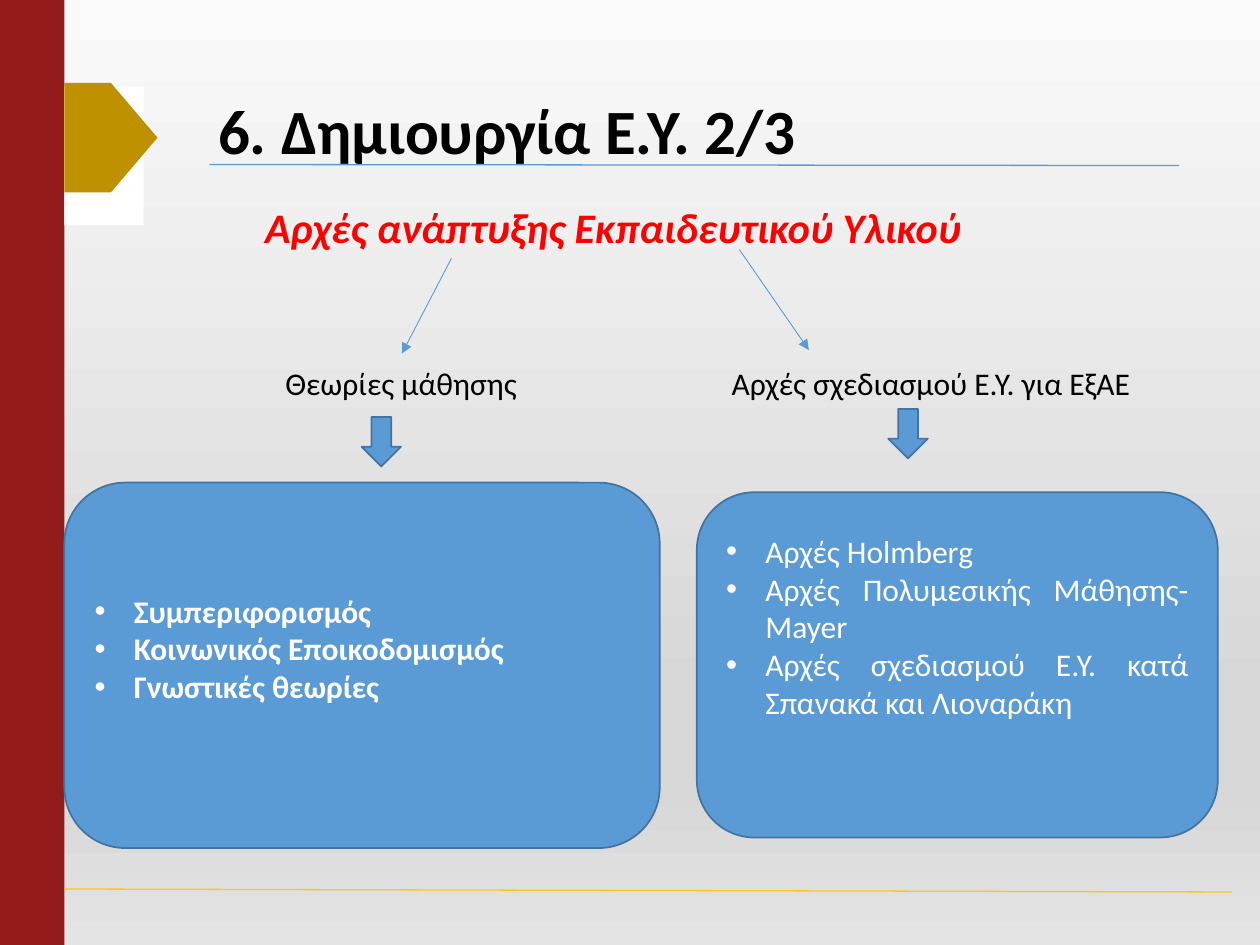
from lxml import etree
from pptx import Presentation
from pptx import util as u
from pptx.dml import color
from pptx.enum import shapes, text
from pptx.oxml import ns

COLORS = {
    "red": "931B1B", "gold": "BF9000", "yellow": "FFC61A", "blue": "5B9BD5",
    "edge": "43739E", "white": "FFFFFF", "black": "000000", "accent": "FF0000",
}
BACKGROUND = [(0, "FAFAFA"), (74, "D7D7D7"), (83, "D7D7D7"), (100, "E4E4E4")]
KIND = shapes.MSO_SHAPE


def rgb(name):
    return color.RGBColor.from_string(COLORS[name])


def add_xml(parent, tag, **attributes):
    return etree.SubElement(parent, ns.qn(tag), attributes)


def apply(target, values):
    for name, value in values.items():
        setattr(target, name, value)


class Builder:
    """Holds the style and the current slide; lengths are in points."""

    font = "Calibri"
    indent = 22.5

    def __init__(self, deck):
        self.page = deck.slides.add_slide(deck.slide_layouts[5])

    def background(self, stops):
        fill = self.page.background.fill
        fill.gradient()
        fill.gradient_angle = 270
        stop_list = self.page.element.find(".//" + ns.qn("a:gsLst"))
        for stop in list(stop_list):
            stop_list.remove(stop)
        for percent, value in stops:
            stop = add_xml(stop_list, "a:gs", pos=str(percent * 1000))
            add_xml(stop, "a:srgbClr", val=value)

    def add_span(self, paragraph, words, size, ink, **style):
        span = paragraph.add_run()
        span.text = words
        apply(span.font, {"name": self.font, "size": u.Pt(size), **style})
        span.font.color.rgb = rgb(ink)

    def title(self, words, left, top, width, height):
        box = self.page.shapes.title
        apply(box, {"left": u.Pt(left), "top": u.Pt(top),
                    "width": u.Pt(width), "height": u.Pt(height)})
        apply(box.text_frame, {
            "vertical_anchor": text.MSO_ANCHOR.BOTTOM, "word_wrap": True,
            "margin_left": u.Pt(31), "margin_bottom": 0,
            "auto_size": text.MSO_AUTO_SIZE.NONE})
        paragraph = box.text_frame.paragraphs[0]
        apply(paragraph, {"alignment": text.PP_ALIGN.LEFT, "line_spacing": 0.9})
        self.add_span(paragraph, words, 36, "black", bold=True)

    def label(self, words, left, top, width, height, size=18, ink="black", **style):
        box = self.page.shapes.add_textbox(*map(u.Pt, (left, top, width, height)))
        apply(box.text_frame, {"word_wrap": True,
                               "auto_size": text.MSO_AUTO_SIZE.SHAPE_TO_FIT_TEXT})
        self.add_span(box.text_frame.paragraphs[0], words, size, ink, **style)

    def shape(self, kind, left, top, width, height, fill, edge=None):
        shape = self.page.shapes.add_shape(kind, *map(u.Pt, (left, top, width, height)))
        shape.shadow.inherit = False
        shape.fill.solid()
        shape.fill.fore_color.rgb = rgb(fill)
        if edge:
            shape.line.color.rgb = rgb(edge)
            shape.line.width = u.Pt(1)
        else:
            shape.line.fill.background()
        return shape

    def bullet_panel(self, items, left, top, width, height, bottom, bold=False):
        panel = self.shape(KIND.ROUNDED_RECTANGLE, left, top, width, height, "blue", "edge")
        frame = panel.text_frame
        apply(frame, {"word_wrap": True, "margin_bottom": u.Pt(bottom),
                      "vertical_anchor": text.MSO_ANCHOR.MIDDLE})
        for number, item in enumerate(items):
            paragraph = frame.add_paragraph() if number else frame.paragraphs[0]
            paragraph.alignment = text.PP_ALIGN.JUSTIFY
            layout = paragraph._p.get_or_add_pPr()
            layout.set("marL", str(u.Pt(self.indent)))
            layout.set("indent", str(-u.Pt(self.indent)))
            add_xml(layout, "a:buFont", typeface="Arial")
            add_xml(layout, "a:buChar", char="•")
            self.add_span(paragraph, item, 18, "white", bold=bold)

    def line(self, x1, y1, x2, y2, ink="blue", width=0.75, arrow=False):
        line = self.page.shapes.add_connector(
            shapes.MSO_CONNECTOR.STRAIGHT, *map(u.Pt, (x1, y1, x2, y2)))
        line.line.color.rgb = rgb(ink)
        line.line.width = u.Pt(width)
        if arrow:
            add_xml(line.get_or_add_ln(), "a:tailEnd", type="triangle")
        add_xml(line.element.spPr, "a:effectLst")


def main():
    deck = Presentation()
    apply(deck, {"slide_width": u.Pt(720), "slide_height": u.Pt(540)})
    slide = Builder(deck)

    # Background, side band, rules and marker
    slide.background(BACKGROUND)
    slide.shape(KIND.RECTANGLE, 0, 0, 36.8, 540, "red")
    slide.line(119.7, 94, 673.7, 94.6)
    slide.line(36.8, 508, 704, 509.7, "yellow")
    slide.shape(KIND.RECTANGLE, 36.8, 49.5, 45.3, 79.2, "white")
    slide.shape(KIND.PENTAGON, 36.8, 47.4, 53.2, 62.6, "gold")

    # Title and heading
    slide.title("6. Δημιουργία Ε.Υ. 2/3", 93.6, 26, 617.8, 70)
    slide.label("Αρχές ανάπτυξης Εκπαιδευτικού Υλικού", 144.4, 111.6, 436.3, 36,
                24, "accent", bold=True, italic=True)

    # Arrows to the two branches
    slide.line(258, 147.6, 229.7, 202, width=0.5, arrow=True)
    slide.line(422.5, 142.6, 462.2, 200, width=0.5, arrow=True)

    # Branch labels and down arrows
    slide.label("Θεωρίες μάθησης", 156, 204.5, 158.4, 29)
    slide.label("Αρχές σχεδιασμού Ε.Υ. για ΕξΑΕ", 411, 204.5, 272, 29)
    for left, top in ((206.6, 238.3), (507.6, 233.7)):
        slide.shape(KIND.DOWN_ARROW, left, top, 22.6, 28.3, "blue", "edge")

    # Bullet panels
    slide.bullet_panel(
        ["Συμπεριφορισμός", "Κοινωνικός Εποικοδομισμός", "Γνωστικές θεωρίες"],
        36.8, 275.8, 340.2, 208.8, bottom=23, bold=True)
    slide.bullet_panel(
        ["Αρχές Holmberg", "Αρχές Πολυμεσικής Μάθησης- Mayer",
         "Αρχές σχεδιασμού Ε.Υ. κατά Σπανακά και Λιοναράκη"],
        398.2, 281.3, 297.7, 197.3, bottom=47.5)

    deck.save("out.pptx")


if __name__ == "__main__":
    main()
